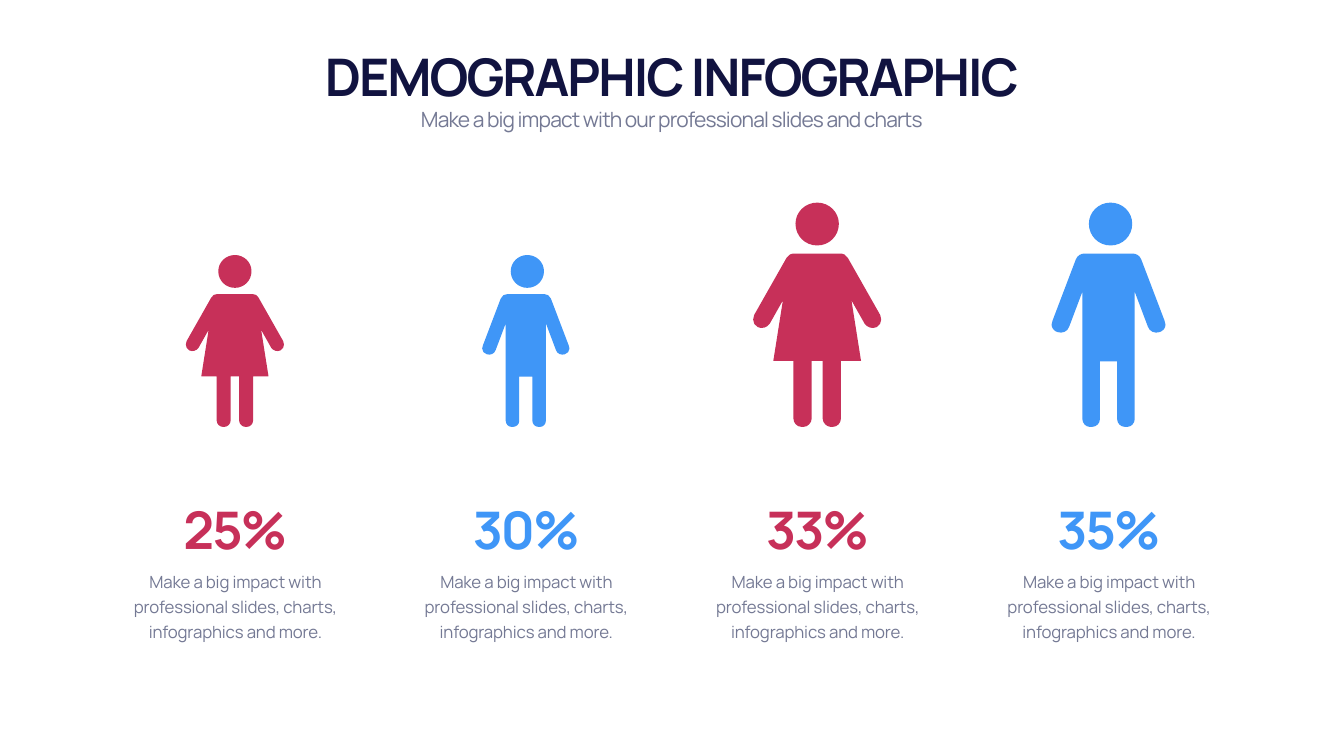
from dataclasses import dataclass

from lxml.etree import SubElement
from pptx import Presentation
from pptx.dml.color import RGBColor
from pptx.enum.text import MSO_ANCHOR, MSO_AUTO_SIZE, PP_ALIGN
from pptx.oxml.ns import qn
from pptx.util import Pt

EMU_PER_PX = 9144
FULL_HEIGHT = 445
FEET_Y = 847
HEAD = (
    (0, 0), (24, 0, 43, 19, 43, 42), (43, 66, 24, 85, 0, 85),
    (-24, 85, -43, 66, -43, 42), (-43, 19, -24, 0, 0, 0),
)


@dataclass(frozen=True)
class Theme:
    font: str = "Manrope"
    navy: RGBColor = RGBColor(0x11, 0x13, 0x40)
    grey: RGBColor = RGBColor(0x74, 0x79, 0x94)
    crimson: RGBColor = RGBColor(0xC7, 0x30, 0x59)
    blue: RGBColor = RGBColor(0x3F, 0x96, 0xF7)
    display_size: int = 74
    subtitle_size: int = 30
    body_size: int = 24
    body_leading: int = 36


@dataclass(frozen=True)
class Figure:
    right_half: tuple
    head_offset: int
    color: RGBColor


THEME = Theme()

WOMAN = Figure(
    right_half=(
        (45, 101), (52, 101, 58, 104, 61, 110),
        (125, 223), (126, 226, 127, 229, 127, 232),
        (127, 238, 124, 244, 118, 247), (110, 251, 99, 248, 94, 240),
        (68, 194), (87, 314), (47, 314),
        (47, 429), (47, 437, 40, 445, 31, 445),
        (27, 445), (19, 445, 11, 437, 11, 429), (11, 314),
    ),
    head_offset=0,
    color=THEME.crimson,
)
MAN = Figure(
    right_half=(
        (47, 101), (55, 101, 62, 105, 65, 113),
        (111, 234), (112, 237, 113, 239, 113, 242),
        (113, 249, 108, 255, 101, 257), (92, 260, 81, 256, 78, 246),
        (52, 177),
        (52, 429), (52, 438, 45, 445, 37, 445),
        (33, 445), (24, 445, 17, 438, 17, 429), (17, 315),
    ),
    head_offset=4,
    color=THEME.blue,
)

BODY_TEXT = "Make a big impact with professional slides, charts, infographics and more."
GROUPS = (
    ("25%", WOMAN, 341),
    ("30%", MAN, 341),
    ("33%", WOMAN, 445),
    ("35%", MAN, 445),
)


def px(length):
    return round(length * EMU_PER_PX)


def pairs(segment):
    return list(zip(segment[::2], segment[1::2]))


def mirrored(half):
    right = [pairs(segment) for segment in half]
    left = [[right[-1][-1]]]
    for before, segment in zip(right[-2::-1], right[:0:-1]):
        left.append(segment[-2::-1] + [before[-1]])
    return right + [[(-x, y) for x, y in segment] for segment in left]


def bend_lines(person, segments):
    path = person._element.find(".//" + qn("a:path"))
    for line, segment in zip(path.findall(qn("a:lnTo")), segments):
        if len(segment) == 1:
            continue
        curve = SubElement(path, qn("a:cubicBezTo"))
        for x, y in segment:
            SubElement(curve, qn("a:pt"), x=str(x - person.left), y=str(y - person.top))
        path.replace(line, curve)


def add_figure(slide, figure, center, height):
    scale = height / FULL_HEIGHT
    top = FEET_Y - height

    def place(segments, offset=0):
        return [[(px(center + (x + offset) * scale), px(top + y * scale))
                 for x, y in segment] for segment in segments]

    body = place(mirrored(figure.right_half))
    head = place(map(pairs, HEAD), figure.head_offset)

    outline = slide.shapes.build_freeform(*body[0][-1], scale=1.0)
    outline.add_line_segments([segment[-1] for segment in body[1:]], close=True)
    outline.move_to(*head[0][-1])
    outline.add_line_segments([segment[-1] for segment in head[1:]], close=True)
    person = outline.convert_to_shape()
    bend_lines(person, body[1:] + head[1:])
    person.fill.solid()
    person.fill.fore_color.rgb = figure.color
    person.line.fill.background()
    person.shadow.inherit = False


def write(holder, text, size, color, tracking, bold=False, leading=None,
          anchor=MSO_ANCHOR.TOP):
    frame = holder.text_frame
    frame.text = text
    frame.word_wrap = True
    frame.auto_size = MSO_AUTO_SIZE.SHAPE_TO_FIT_TEXT
    frame.vertical_anchor = anchor
    frame.margin_top = frame.margin_bottom = px(5)
    paragraph = frame.paragraphs[0]
    paragraph.alignment = PP_ALIGN.CENTER
    if leading:
        paragraph.line_spacing = Pt(leading)
    font = paragraph.font
    font.name = THEME.font
    font.size = Pt(size)
    font.bold = bold
    font.color.rgb = color
    paragraph._p.pPr.find(qn("a:defRPr")).set("spc", str(tracking))


def add_title(slide, text):
    title = slide.shapes.title
    title.left, title.top, title.width, title.height = map(px, (166, 82, 2333, 135))
    write(title, text, THEME.display_size, THEME.navy, -290, bold=True,
          anchor=MSO_ANCHOR.BOTTOM)


def add_text(slide, box, text, size, color, tracking, **style):
    holder = slide.shapes.add_textbox(*map(px, box))
    write(holder, text, size, color, tracking, **style)


def add_group(slide, left, percent, figure, height):
    width = 450
    add_figure(slide, figure, left + width // 2 - 1, height)
    add_text(slide, (left, 980, width, 135), percent, THEME.display_size,
             figure.color, -290, bold=True, anchor=MSO_ANCHOR.BOTTOM)
    add_text(slide, (left, 1119, width, 159), BODY_TEXT, THEME.body_size,
             THEME.grey, -20, leading=THEME.body_leading)


def main():
    deck = Presentation()
    deck.slide_width, deck.slide_height = px(2666), px(1500)
    slide = deck.slides.add_slide(deck.slide_layouts[5])

    add_title(slide, "DEMOGRAPHIC INFOGRAPHIC")
    add_text(slide, (166, 207, 2333, 61),
             "Make a big impact with our professional slides and charts",
             THEME.subtitle_size, THEME.grey, -120)
    for index, (percent, figure, height) in enumerate(GROUPS):
        add_group(slide, 242 + index * 1733 // 3, percent, figure, height)

    deck.save("out.pptx")


if __name__ == "__main__":
    main()
